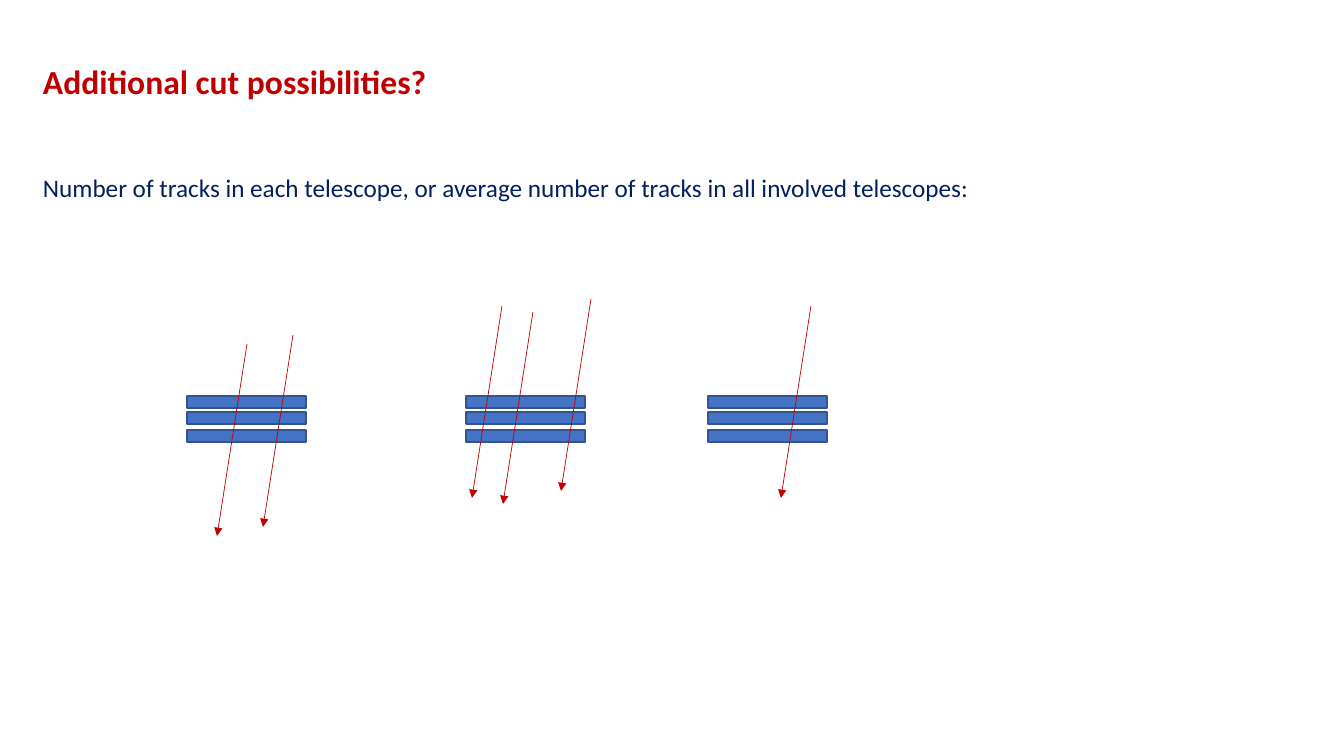
from lxml import etree
from pptx import Presentation
from pptx.dml.color import RGBColor
from pptx.enum.shapes import MSO_CONNECTOR, MSO_SHAPE
from pptx.oxml.ns import qn
from pptx.util import Pt

RECT = MSO_SHAPE.RECTANGLE
STRAIGHT = MSO_CONNECTOR.STRAIGHT
SLIDE_W, SLIDE_H = 1344, 756
EMU_PER_PX = 12192000 / SLIDE_W
RED, NAVY, BLUE, BLUE_EDGE = "C00000", "002060", "4472C4", "325491"


def px(*lengths):
    """Turn px lengths into a list of EMU lengths."""
    return [round(n * EMU_PER_PX) for n in lengths]


def add_text(p, text, size, color, bold=False, before=0):
    p.space_before = Pt(before)
    r = p.add_run()
    r.text = text
    r.font.name = "Calibri"
    r.font.size = Pt(size)
    r.font.bold = bold
    r.font.color.rgb = RGBColor.from_string(color)


prs = Presentation()
prs.slide_width, prs.slide_height = px(SLIDE_W, SLIDE_H)
s = prs.slides.add_slide(prs.slide_layouts[6])

# Title and introduction
tf = s.shapes.add_textbox(*px(33, 56, 1047, 183)).text_frame
tf.word_wrap = True
add_text(tf.paragraphs[0], "Additional cut possibilities?", 24, RED, bold=True)
add_text(tf.add_paragraph(),
         "Number of tracks in each telescope, or average number of tracks "
         "in all involved telescopes:", 18, NAVY, before=51)

# Three telescopes, each a stack of three planes
for left in (187, 466, 708):
    for top in (396, 412, 430):
        sp = s.shapes.add_shape(RECT, *px(left, top, 119, 12))
        sp.shadow.inherit = False
        sp.fill.solid()
        sp.fill.fore_color.rgb = RGBColor.from_string(BLUE)
        sp.line.color.rgb = RGBColor.from_string(BLUE_EDGE)
        sp.line.width = Pt(1)

# Parallel tracks, given by their starting points
TRACK_DX, TRACK_DY = -30, 192
for x, y in ((247, 344), (293, 335), (591, 299),
             (533, 312), (502, 306), (811, 306)):
    track = s.shapes.add_connector(
        STRAIGHT, *px(x, y, x + TRACK_DX, y + TRACK_DY))
    track.line.color.rgb = RGBColor.from_string(RED)
    track.line.width = Pt(0.5)
    etree.SubElement(track.line._get_or_add_ln(), qn("a:tailEnd"), type="triangle")
    etree.SubElement(track._element.spPr, qn("a:effectLst"))

prs.save("out.pptx")
